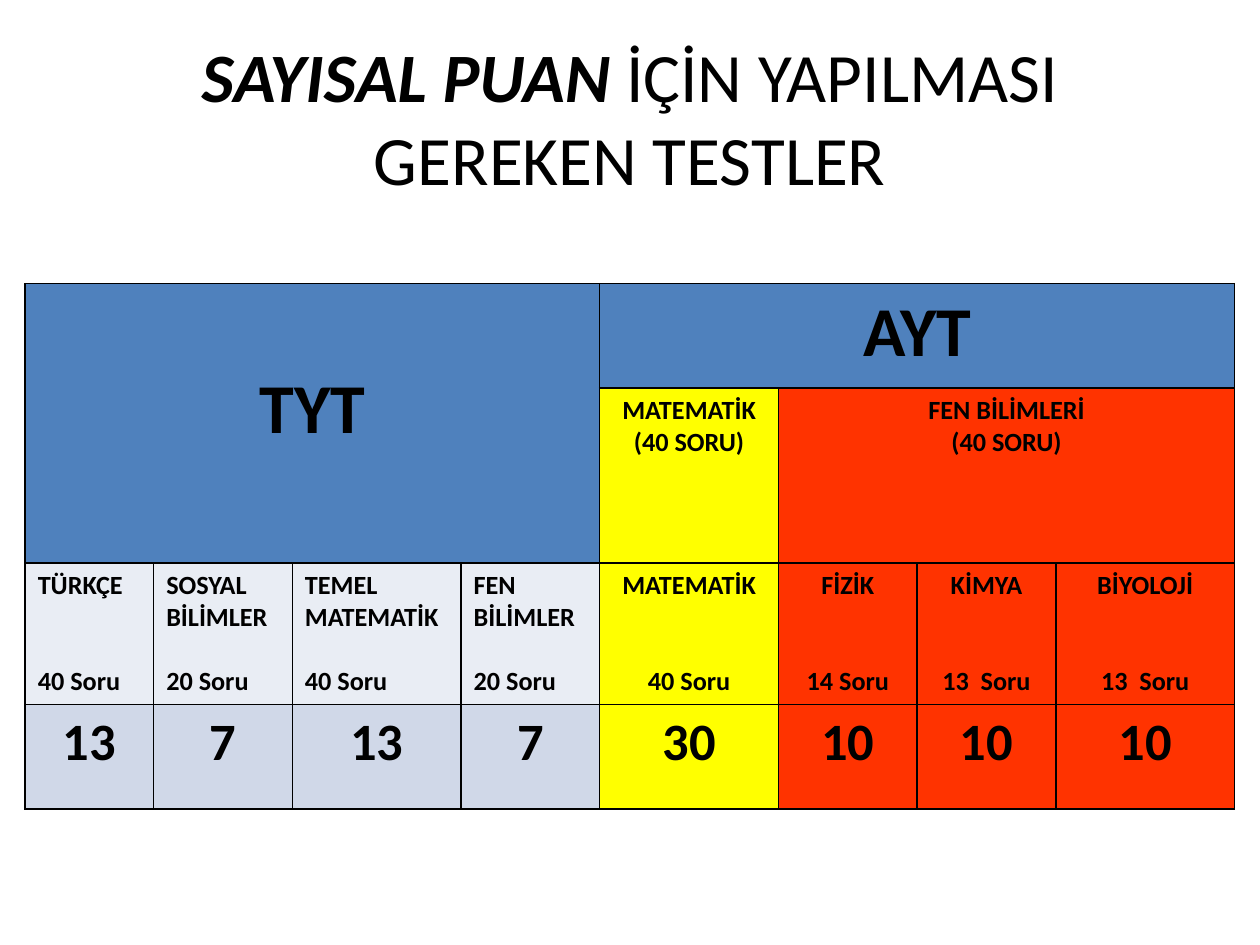
import lxml.etree
import pptx
import pptx.dml.color
import pptx.enum.text
import pptx.oxml.ns
import pptx.util

RGBColor = pptx.dml.color.RGBColor
BLACK = RGBColor(0x00, 0x00, 0x00)
BLUE = RGBColor(0x4F, 0x81, 0xBD)
PALE = RGBColor(0xE9, 0xED, 0xF4)
PALE_BLUE = RGBColor(0xD0, 0xD8, 0xE8)
YELLOW = RGBColor(0xFF, 0xFF, 0x00)
RED = RGBColor(0xFF, 0x33, 0x00)

LEFT = pptx.enum.text.PP_ALIGN.LEFT
CENTER = pptx.enum.text.PP_ALIGN.CENTER
MIDDLE = pptx.enum.text.MSO_ANCHOR.MIDDLE

COLUMN_WIDTHS = [1.02, 1.1, 1.34, 1.1, 1.42, 1.1, 1.1, 1.42]
ROW_HEIGHTS = [0.83, 1.39, 1.12, 0.83]
SUBJECTS = [
    ("TÜRKÇE", "40 Soru", "13", PALE, PALE_BLUE, LEFT),
    ("SOSYAL BİLİMLER", "20 Soru", "7", PALE, PALE_BLUE, LEFT),
    ("TEMEL MATEMATİK", "40 Soru", "13", PALE, PALE_BLUE, LEFT),
    ("FEN BİLİMLER", "20 Soru", "7", PALE, PALE_BLUE, LEFT),
    ("MATEMATİK", "40 Soru", "30", YELLOW, YELLOW, CENTER),
    ("FİZİK", "14 Soru", "10", RED, RED, CENTER),
    ("KİMYA", "13  Soru", "10", RED, RED, CENTER),
    ("BİYOLOJİ", "13  Soru", "10", RED, RED, CENTER),
]


class SlideBuilder:
    font_name = "Calibri"
    border_points = 1
    line_height = 1.22

    def __init__(self, deck):
        self.deck = deck
        self.slide = deck.slides.add_slide(deck.slide_layouts[6])

    def place(self, left, top, width, height):
        across, down = self.deck.slide_width, self.deck.slide_height
        return [int(share * side) for share, side in
                zip((left, top, width, height), (across, down, across, down))]

    def add_words(self, paragraph, text, size, bold=True, italic=False):
        run = paragraph.add_run()
        run.text = text
        look = {"name": self.font_name, "size": pptx.util.Pt(size),
                "bold": bold, "italic": italic}
        for key, value in look.items():
            setattr(run.font, key, value)
        run.font.color.rgb = BLACK

    def title(self, area, size, parts):
        frame = self.slide.shapes.add_textbox(*self.place(*area)).text_frame
        for key, value in {"word_wrap": True, "vertical_anchor": MIDDLE}.items():
            setattr(frame, key, value)
        heading = frame.paragraphs[0]
        heading.alignment = CENTER
        for text, emphasis in parts:
            self.add_words(heading, text, size, emphasis, emphasis)

    def table(self, area, widths, heights):
        table = self.slide.shapes.add_table(
            len(heights), len(widths), *self.place(*area)).table
        for column, width in zip(table.columns, widths):
            column.width = pptx.util.Inches(width)
        for row, height in zip(table.rows, heights):
            row.height = pptx.util.Inches(height)
        for cell in table.iter_cells():
            self.border(cell)
        return table

    def border(self, cell):
        properties = cell._tc.get_or_add_tcPr()
        qn = pptx.oxml.ns.qn
        for side in ("a:lnL", "a:lnR", "a:lnT", "a:lnB"):
            line = lxml.etree.SubElement(
                properties, qn(side), w=str(pptx.util.Pt(self.border_points)))
            fill = lxml.etree.SubElement(line, qn("a:solidFill"))
            lxml.etree.SubElement(fill, qn("a:srgbClr"), val=str(BLACK))

    def cell(self, table, row, column, lines, size, fill,
             align=CENTER, span=(1, 1), gap_lines=0, lead=0):
        cell = table.cell(row, column)
        if span != (1, 1):
            cell.merge(table.cell(row + span[0] - 1, column + span[1] - 1))
        cell.fill.solid()
        cell.fill.fore_color.rgb = fill
        cell.margin_top = pptx.util.Inches(0.05 + lead)
        frame = cell.text_frame
        for index, text in enumerate(lines):
            paragraph = frame.add_paragraph() if index else frame.paragraphs[0]
            paragraph.alignment = align
            if index and gap_lines:
                paragraph.space_before = pptx.util.Pt(
                    gap_lines * size * self.line_height)
            self.add_words(paragraph, text, size)


def main():
    deck = pptx.Presentation()
    deck.slide_width = pptx.util.Inches(10)
    deck.slide_height = pptx.util.Inches(7.5)
    builder = SlideBuilder(deck)

    builder.title((0.05, 0.04, 0.9, 1 / 6), 39.6,
                  [("SAYISAL PUAN", True),
                   (" İÇİN YAPILMASI GEREKEN TESTLER", False)])

    scores = builder.table(
        (0.02, 0.3, sum(COLUMN_WIDTHS) / 10, sum(ROW_HEIGHTS) / 7.5),
        COLUMN_WIDTHS, ROW_HEIGHTS)
    builder.cell(scores, 0, 0, ["TYT"], 40, BLUE, span=(2, 4), lead=0.61)
    builder.cell(scores, 0, 4, ["AYT"], 40, BLUE, span=(1, 4))
    builder.cell(scores, 1, 4, ["MATEMATİK", "(40 SORU)"], 15, YELLOW)
    builder.cell(scores, 1, 5, ["FEN BİLİMLERİ", "(40 SORU)"], 15, RED, span=(1, 3))

    for column, subject in enumerate(SUBJECTS):
        name, questions, points, name_fill, points_fill, align = subject
        builder.cell(scores, 2, column, [name, questions], 15, name_fill,
                     align, gap_lines=3 - len(name.split()))
        builder.cell(scores, 3, column, [points], 30, points_fill)

    deck.save("out.pptx")


if __name__ == "__main__":
    main()
